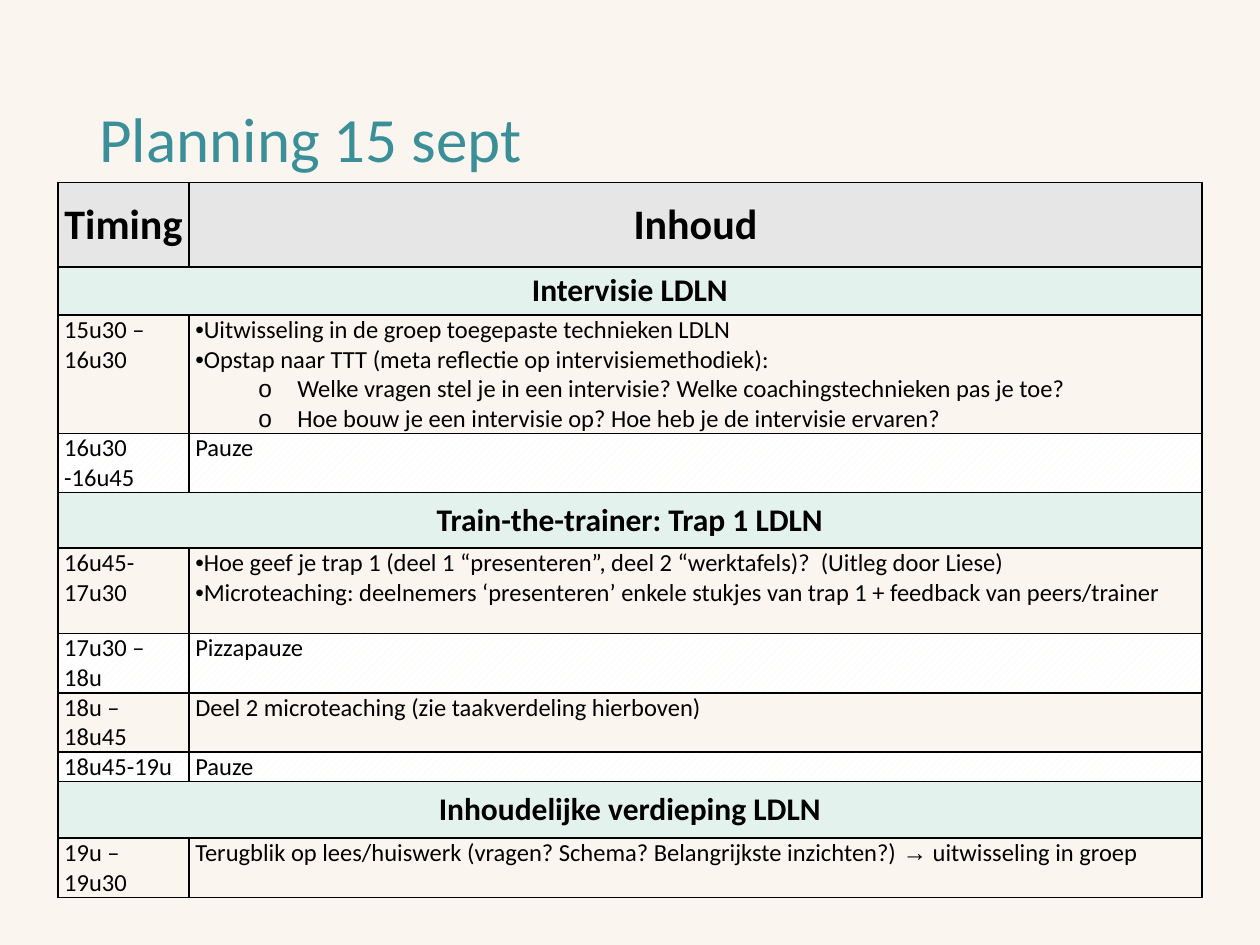
"""Build the planning slide with its timetable."""
from dataclasses import dataclass

from lxml.etree import SubElement
from pptx import Presentation
from pptx.dml.color import RGBColor
from pptx.enum.dml import MSO_PATTERN
from pptx.enum.text import MSO_ANCHOR, PP_ALIGN
from pptx.oxml.ns import qn
from pptx.util import Inches, Pt


@dataclass(frozen=True)
class Theme:
    font: str = "Calibri"
    symbol_font: str = "Arial"
    background: str = "FAF6EF"
    title: str = "3A8F98"
    text: str = "000000"
    header: str = "E7E6E6"
    section: str = "E3F2ED"
    stripe: str = "FBF6EF"
    pause: str = "FFFFFF"
    title_size: int = 36
    header_size: int = 24
    section_size: int = 18
    body_size: int = 14
    border_width: int = 1


@dataclass(frozen=True)
class Line:
    text: str
    bullet: str = ""
    indent: float = 0
    hanging: float = 0


@dataclass(frozen=True)
class Row:
    height: float
    kind: str
    timing: str
    lines: tuple[Line, ...] = ()


THEME = Theme()
COLUMN_WIDTHS = (1.04, 8.04)


def point(text: str) -> Line:
    return Line(text, "•")


def question(text: str) -> Line:
    return Line(text, "o", 0.81, 0.31)


ROWS = (
    Row(0.67, "header", "Timing", (Line("Inhoud"),)),
    Row(0.38, "section", "Intervisie LDLN"),
    Row(0.94, "body", "15u30 – 16u30", (
        point("Uitwisseling in de groep toegepaste technieken LDLN"),
        point("Opstap naar TTT (meta reflectie op intervisiemethodiek):"),
        question("Welke vragen stel je in een intervisie? Welke coachingstechnieken pas je toe?"),
        question("Hoe bouw je een intervisie op? Hoe heb je de intervisie ervaren?"),
    )),
    Row(0.47, "pause", "16u30 -16u45", (Line("Pauze"),)),
    Row(0.44, "section", "Train-the-trainer: Trap 1 LDLN"),
    Row(0.68, "body", "16u45-17u30", (
        point("Hoe geef je trap 1 (deel 1 “presenteren”, deel 2 “werktafels)?  (Uitleg door Liese)"),
        point("Microteaching: deelnemers ‘presenteren’ enkele stukjes van trap 1 + feedback van peers/trainer"),
    )),
    Row(0.47, "pause", "17u30 – 18u", (Line("Pizzapauze"),)),
    Row(0.47, "body", "18u – 18u45", (Line("Deel 2 microteaching (zie taakverdeling hierboven)"),)),
    Row(0.23, "pause", "18u45-19u", (Line("Pauze"),)),
    Row(0.45, "section", "Inhoudelijke verdieping LDLN"),
    Row(0.47, "body", "19u – 19u30", (
        Line("Terugblik op lees/huiswerk (vragen? Schema? Belangrijkste inzichten?) → uitwisseling in groep"),
    )),
)


def color(value: str) -> RGBColor:
    return RGBColor.from_string(value)


def add_run(paragraph, text: str, size: int, fill: str, bold: bool = False) -> None:
    run = paragraph.add_run()
    run.text = text
    run.font.name = THEME.symbol_font if text == "→" else THEME.font
    run.font.size = Pt(size)
    run.font.bold = bold
    run.font.color.rgb = color(fill)


def add_bullet(paragraph, line: Line) -> None:
    properties = paragraph._p.get_or_add_pPr()
    properties.set("marL", str(Inches(line.indent)))
    properties.set("indent", str(-Inches(line.hanging)))
    SubElement(properties, qn("a:buFont"), typeface=THEME.symbol_font)
    SubElement(properties, qn("a:buChar"), char=line.bullet)


def add_borders(cell) -> None:
    properties = cell._tc.get_or_add_tcPr()
    for index, side in enumerate(("a:lnL", "a:lnR", "a:lnT", "a:lnB")):
        border = properties.makeelement(qn(side), {"w": str(Pt(THEME.border_width))})
        fill = SubElement(border, qn("a:solidFill"))
        SubElement(fill, qn("a:srgbClr"), val=THEME.text)
        properties.insert(index, border)


def fill_cell(cell, kind: str) -> None:
    if kind == "body":
        cell.fill.background()
    elif kind == "pause":
        cell.fill.patterned()
        cell.fill.pattern = MSO_PATTERN.WIDE_UPWARD_DIAGONAL
        cell.fill.fore_color.rgb = color(THEME.stripe)
        cell.fill.back_color.rgb = color(THEME.pause)
    else:
        cell.fill.solid()
        cell.fill.fore_color.rgb = color(THEME.header if kind == "header" else THEME.section)


def write_cell(cell, kind: str, lines: tuple[Line, ...]) -> None:
    heading = kind in ("header", "section")
    size = {"header": THEME.header_size, "section": THEME.section_size}.get(kind, THEME.body_size)
    cell.margin_left = cell.margin_right = Inches(0.05)
    cell.margin_top = cell.margin_bottom = Inches(0)
    cell.vertical_anchor = MSO_ANCHOR.MIDDLE if heading else MSO_ANCHOR.TOP
    for index, line in enumerate(lines):
        text_frame = cell.text_frame
        paragraph = text_frame.add_paragraph() if index else text_frame.paragraphs[0]
        paragraph.alignment = PP_ALIGN.CENTER if heading else PP_ALIGN.LEFT
        if line.bullet:
            add_bullet(paragraph, line)
        for part in filter(None, line.text.partition("→")):
            add_run(paragraph, part, size, THEME.text, heading)


def add_title(slide, text: str) -> None:
    shape = slide.shapes.add_textbox(Inches(0.69), Inches(0.4), Inches(8.62), Inches(1.45))
    text_frame = shape.text_frame
    text_frame.word_wrap = True
    text_frame.vertical_anchor = MSO_ANCHOR.MIDDLE
    paragraph = text_frame.paragraphs[0]
    paragraph.line_spacing = 0.9
    add_run(paragraph, text, THEME.title_size, THEME.title)


def add_timetable(slide, rows: tuple[Row, ...]) -> None:
    width = Inches(sum(COLUMN_WIDTHS))
    height = Inches(sum(row.height for row in rows))
    table = slide.shapes.add_table(
        len(rows), len(COLUMN_WIDTHS), Inches(0.46), Inches(1.45), width, height
    ).table
    for column, column_width in zip(table.columns, COLUMN_WIDTHS):
        column.width = Inches(column_width)
    for index, row in enumerate(rows):
        table.rows[index].height = Inches(row.height)
        timing, content = table.cell(index, 0), table.cell(index, 1)
        if row.kind == "section":
            timing.merge(content)
        for cell, lines in ((timing, (Line(row.timing),)), (content, row.lines)):
            fill_cell(cell, row.kind)
            add_borders(cell)
            write_cell(cell, row.kind, lines)


def main() -> None:
    presentation = Presentation()
    presentation.slide_width, presentation.slide_height = Inches(10), Inches(7.5)
    slide = presentation.slides.add_slide(presentation.slide_layouts[6])
    slide.background.fill.solid()
    slide.background.fill.fore_color.rgb = color(THEME.background)
    add_title(slide, "Planning 15 sept")
    add_timetable(slide, ROWS)
    presentation.save("out.pptx")


if __name__ == "__main__":
    main()
